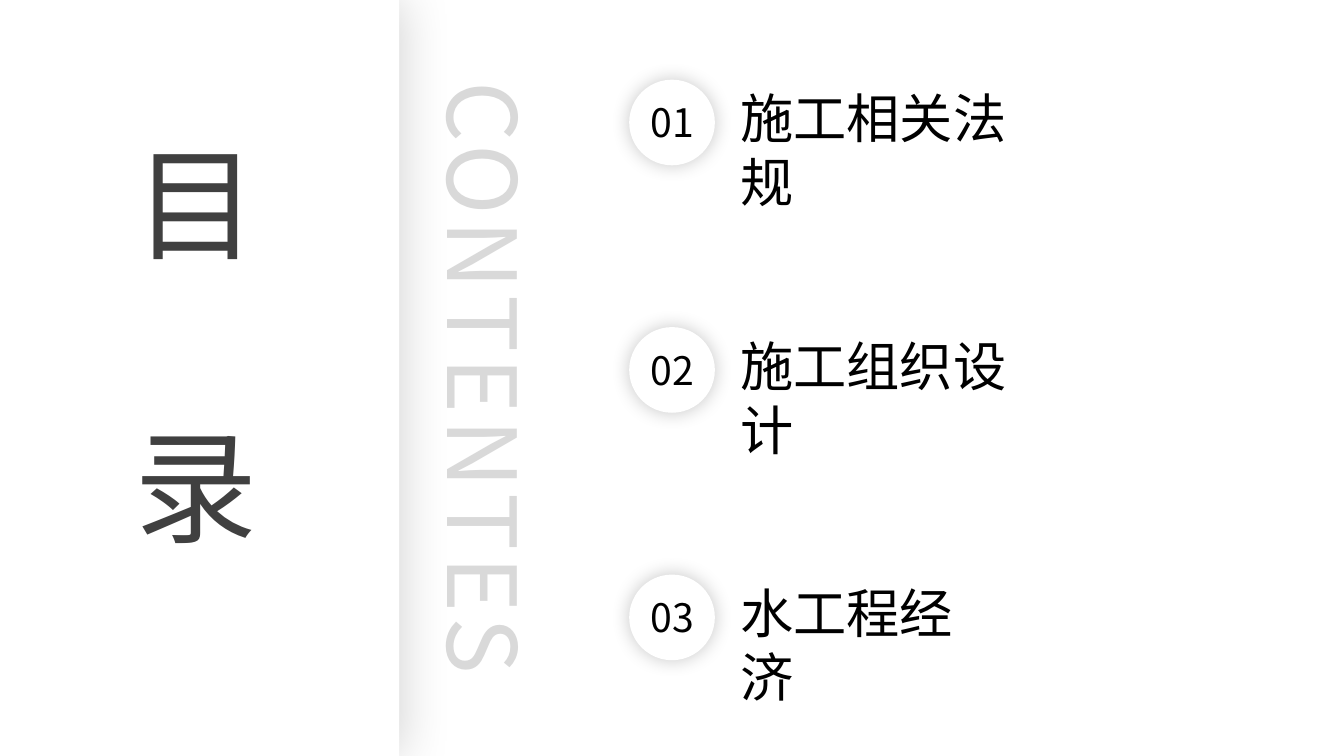
import pptx
import pptx.dml.color
import pptx.enum.shapes
import pptx.enum.text
import pptx.oxml
import pptx.oxml.ns
import pptx.util
from pptx.util import Inches

FONT = "Noto Sans CJK SC"
COLORS = {
    "white": "FFFFFF",
    "black": "000000",
    "heading": "404040",
    "pale": "D9D9D9",
}
# Number, entry, text width in inches
ENTRIES = [
    ("01", "施工相关法规", 3.25),
    ("02", "施工组织设计", 3.25),
    ("03", "水工程经济", 2.72),
]
FIRST_TOP = 0.79
ENTRY_STEP = 2.455


def rgb(name):
    return pptx.dml.color.RGBColor.from_string(COLORS[name])


def write(box, text, size, color, centred=True, spacing=None):
    """Fill a text shape with one run; spacing is in points."""
    frame = box.text_frame
    frame.word_wrap = True
    frame.auto_size = pptx.enum.text.MSO_AUTO_SIZE.SHAPE_TO_FIT_TEXT
    frame.vertical_anchor = pptx.enum.text.MSO_ANCHOR.TOP
    frame.margin_left = frame.margin_right = Inches(0.05)
    frame.margin_top = frame.margin_bottom = Inches(0.05)
    para = frame.paragraphs[0]
    align = pptx.enum.text.PP_ALIGN
    para.alignment = align.CENTER if centred else align.LEFT
    span = para.add_run()
    span.text = text
    span.font.size = pptx.util.Pt(size)
    span.font.name = FONT
    span.font.color.rgb = rgb(color)
    properties = span.font._element
    if spacing:
        properties.set("spc", str(round(spacing * 100)))
    latin = properties.find(pptx.oxml.ns.qn("a:latin"))
    latin.addnext(pptx.oxml.parse_xml(
        f'<a:ea {pptx.oxml.ns.nsdecls("a")} typeface="{FONT}"/>'))


def add_text(shapes, place, *args, **options):
    box = shapes.add_textbox(*map(Inches, place))
    write(box, *args, **options)
    return box


def add_white_shape(shapes, kind, place, alpha, blur, distance=0):
    """Add a borderless white shape with a soft shadow (percent, points)."""
    shape = shapes.add_shape(kind, *map(Inches, place))
    shape.shadow.inherit = False
    shape.fill.solid()
    shape.fill.fore_color.rgb = rgb("white")
    shape.line.fill.background()
    effects = shape.element.spPr.find(pptx.oxml.ns.qn("a:effectLst"))
    effects.append(pptx.oxml.parse_xml(
        f'<a:outerShdw {pptx.oxml.ns.nsdecls("a")}'
        f' blurRad="{pptx.util.Pt(blur)}" dist="{pptx.util.Pt(distance)}"'
        f' dir="0" algn="ctr" rotWithShape="0">'
        f'<a:srgbClr val="{COLORS["black"]}"><a:alpha val="{alpha * 1000}"/>'
        f'</a:srgbClr></a:outerShdw>'))


def add_badge(page, number, top):
    badge = page.shapes.add_group_shape()
    add_white_shape(badge.shapes, pptx.enum.shapes.MSO_SHAPE.OVAL,
                    (6.24, top, 0.85, 0.85), alpha=22, blur=14)
    add_text(badge.shapes, (6.21, top + 0.14, 0.92, 0.57), number, 28, "black")


def add_heading(page):
    """Set the two heading characters, the first in the title placeholder."""
    title = page.shapes.title
    title.left, title.top, title.width, title.height = map(
        Inches, (1.28, 1.21, 0.7, 1.81))
    write(title, "目", 88, "heading")
    page.shapes.element.append(title.element)  # in front of the panel
    add_text(page.shapes, (1.28, 4.02, 0.7, 1.81), "录", 88, "heading")


def main():
    deck = pptx.Presentation()
    deck.slide_width, deck.slide_height = Inches(13.33), Inches(7.5)
    page = deck.slides.add_slide(deck.slide_layouts.get_by_name("Title Only"))

    side_label = add_text(page.shapes, (0.67, 3.13, 8.29, 1.24), "CONTENTES",
                          68, "pale", spacing=3.9)
    side_label.rotation = 90
    add_white_shape(page.shapes, pptx.enum.shapes.MSO_SHAPE.RECTANGLE,
                    (0, 0, 3.96, 7.5), alpha=16, blur=36, distance=3)
    add_heading(page)

    for index, (number, entry, width) in enumerate(ENTRIES):
        top = FIRST_TOP + index * ENTRY_STEP
        add_badge(page, number, top)
        add_text(page.shapes, (7.29, top + 0.01, width, 0.74), entry, 38,
                 "black", centred=False)

    deck.save("out.pptx")


if __name__ == "__main__":
    main()
